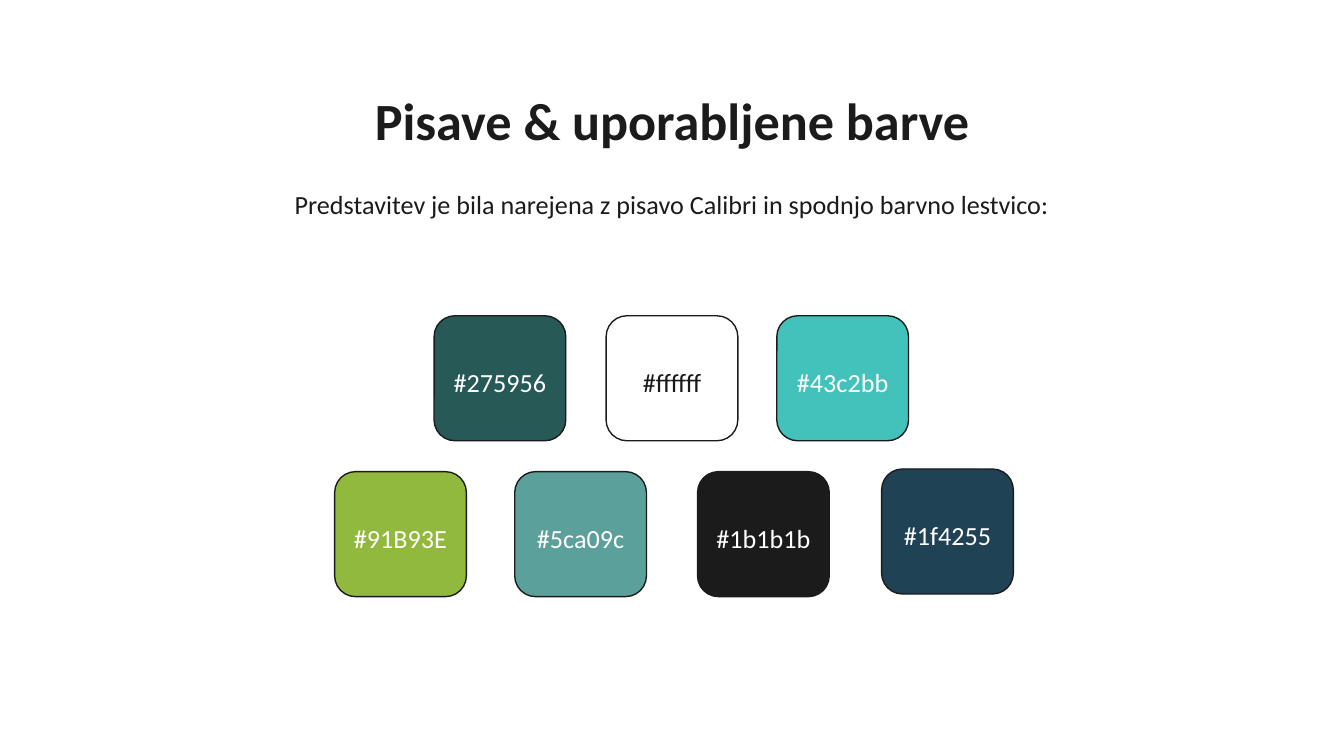
from pptx import Presentation
from pptx.dml.color import RGBColor
from pptx.enum.shapes import MSO_SHAPE
from pptx.enum.text import MSO_ANCHOR, PP_ALIGN
from pptx.util import Inches, Pt

TITLE = "Pisave & uporabljene barve"
INTRO = "Predstavitev je bila narejena z pisavo Calibri in spodnjo barvno lestvico:"
# Each row: top edge, then the colour codes with their left edges (inches)
PALETTE_ROWS = [
    (2.35, {"#275956": 3.23, "#ffffff": 4.51, "#43c2bb": 5.78}),
    (3.51, {"#91B93E": 2.49, "#5ca09c": 3.83, "#1b1b1b": 5.19}),
    (3.49, {"#1f4255": 6.56}),
]

COLORS = {"ink": "1B1B1B", "dark_label": "191919", "white": "FFFFFF"}
FONT = "Calibri"
SLIDE_W = 10
SLIDE_H = SLIDE_W * 9 / 16
TEXT_W = 8.43
TEXT_LEFT = (SLIDE_W - TEXT_W) / 2
SWATCH_W, SWATCH_H = 0.98, 0.93
LABEL_H, LABEL_DROP = 0.54, 0.22


def rgb(hex_code):
    return RGBColor.from_string(hex_code.lstrip("#").upper())


def write(box, text, size, color, bold=False, anchor=MSO_ANCHOR.TOP):
    frame = box.text_frame
    frame.text = text
    frame.word_wrap = True
    frame.vertical_anchor = anchor
    frame.margin_left = frame.margin_right = Inches(0.1)
    frame.margin_top = frame.margin_bottom = Inches(0.1)
    paragraph = frame.paragraphs[0]
    paragraph.alignment = PP_ALIGN.CENTER
    paragraph.font.name = FONT
    paragraph.font.size = Pt(size)
    paragraph.font.bold = bold
    paragraph.font.color.rgb = rgb(color)


def add_swatch(slide, left, top, code):
    """Add a rounded colour tile with its code written over it."""
    tile = slide.shapes.add_shape(
        MSO_SHAPE.ROUNDED_RECTANGLE,
        Inches(left), Inches(top), Inches(SWATCH_W), Inches(SWATCH_H))
    tile.shadow.inherit = False
    tile.fill.solid()
    tile.fill.fore_color.rgb = rgb(code)
    tile.line.color.rgb = rgb(COLORS["ink"])
    tile.line.width = Pt(0.75)

    label = slide.shapes.add_textbox(
        Inches(left), Inches(top + LABEL_DROP), Inches(SWATCH_W), Inches(LABEL_H))
    label_color = COLORS["dark_label" if code == "#ffffff" else "white"]
    write(label, code, 14, label_color, anchor=MSO_ANCHOR.MIDDLE)


def main():
    deck = Presentation()
    deck.slide_width, deck.slide_height = Inches(SLIDE_W), Inches(SLIDE_H)
    slide = deck.slides.add_slide(deck.slide_layouts[5])

    title = slide.shapes.title
    title.left, title.top = Inches(TEXT_LEFT), Inches(0.56)
    title.width, title.height = Inches(TEXT_W), Inches(0.53)
    write(title, TITLE, 28, COLORS["ink"], bold=True)

    intro = slide.shapes.add_textbox(
        Inches(TEXT_LEFT), Inches(1.3), Inches(TEXT_W), Inches(0.54))
    write(intro, INTRO, 14, COLORS["ink"])

    for top, swatches in PALETTE_ROWS:
        for code, left in swatches.items():
            add_swatch(slide, left, top, code)

    deck.save("out.pptx")


if __name__ == "__main__":
    main()
